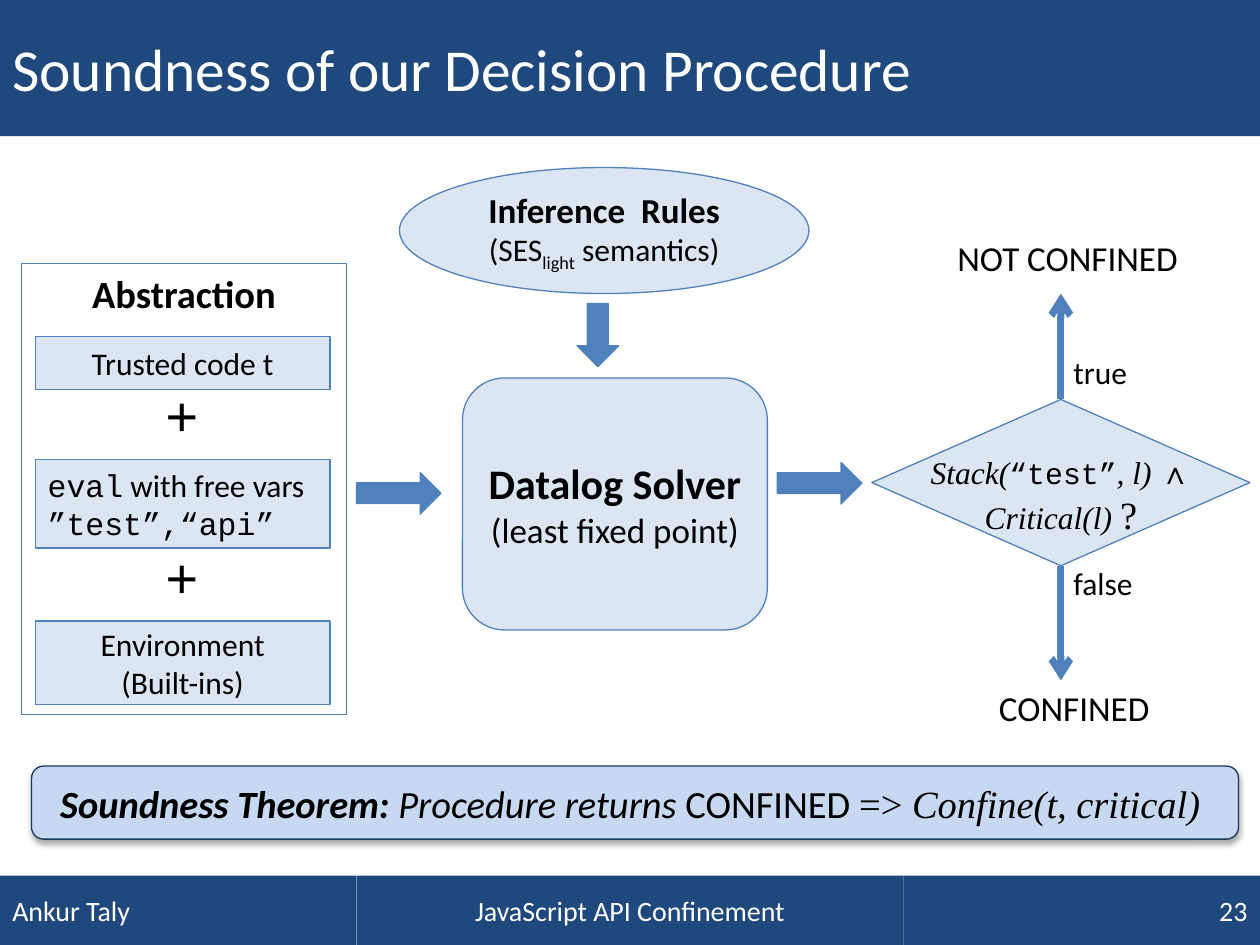
from pptx import Presentation
from pptx.dml.color import RGBColor
from pptx.enum.shapes import MSO_CONNECTOR, MSO_SHAPE as Shape
from pptx.enum.text import MSO_ANCHOR as Anchor, MSO_AUTO_SIZE as AutoSize, PP_ALIGN as Align
from pptx.oxml.ns import qn
from pptx.util import Emu, Pt
from lxml.etree import SubElement

NAVY, BLUE, PALE, SKY, DEEP = "1F497D", "4F81BD", "DCE6F2", "C6D9F1", "17375E"
BLACK, WHITE = "000000", "FFFFFF"
SANS, MONO, SERIF = "Calibri", "Courier New", "Times New Roman"
PX_PER_INCH = 100


def px(length):
    return Emu(length * 914400 // PX_PER_INCH)


def rgb(code):
    return RGBColor.from_string(code)


def run(text, size=18, font=SANS, bold=False, italic=False, baseline=0):
    return text, size, font, bold, italic, baseline


class Deck:
    def __init__(self, width, height):
        self.prs = Presentation()
        self.prs.slide_width, self.prs.slide_height = px(width), px(height)
        self.slide = self.prs.slides.add_slide(self.prs.slide_layouts[6])

    def fill_text(self, frame, paragraphs, align, color=BLACK):
        frame.word_wrap = True
        for index, runs in enumerate(paragraphs):
            paragraph = frame.add_paragraph() if index else frame.paragraphs[0]
            paragraph.alignment = align
            for text, size, font, bold, italic, baseline in runs:
                piece = paragraph.add_run()
                piece.text = text
                piece.font.size, piece.font.name = Pt(size), font
                piece.font.bold, piece.font.italic = bold, italic
                piece.font.color.rgb = rgb(color)
                if baseline:
                    piece.font._element.set("baseline", str(baseline * 1000))

    def box(self, kind, place, paragraphs=(), fill=PALE, line=BLUE, align=Align.CENTER, color=BLACK):
        shape = self.slide.shapes.add_shape(kind, *map(px, place))
        shape.shadow.inherit = False
        if fill:
            shape.fill.solid()
            shape.fill.fore_color.rgb = rgb(fill)
        else:
            shape.fill.background()
        if line:
            shape.line.color.rgb = rgb(line)
            shape.line.width = Pt(0.75)
        else:
            shape.line.fill.background()
        shape.text_frame.vertical_anchor = Anchor.MIDDLE
        self.fill_text(shape.text_frame, paragraphs, align, color)
        return shape

    def bar(self, place, text, size, align):
        self.box(Shape.RECTANGLE, place, [[run(text, size)]], NAVY, None, align, WHITE)

    def label(self, place, paragraphs, align=Align.LEFT):
        frame = self.slide.shapes.add_textbox(*map(px, place)).text_frame
        self.fill_text(frame, paragraphs, align)
        frame.auto_size = AutoSize.SHAPE_TO_FIT_TEXT

    def arrow(self, x, start, end):
        line = self.slide.shapes.add_connector(MSO_CONNECTOR.STRAIGHT, px(x), px(start), px(x), px(end))
        line.line.color.rgb = rgb(BLUE)
        line.line.width = Pt(4)
        SubElement(line.line._get_or_add_ln(), qn("a:tailEnd"), type="arrow")
        SubElement(line._element.spPr, qn("a:effectLst"))

    def cast_shadow(self, shape):
        effects = shape._element.spPr.find(qn("a:effectLst"))
        shadow = SubElement(effects, qn("a:outerShdw"), blurRad=str(Pt(3.1)), dist=str(Pt(1.8)),
                            dir="5400000", rotWithShape="0")
        tint = SubElement(shadow, qn("a:srgbClr"), val=BLACK)
        SubElement(tint, qn("a:alpha"), val="35000")


def main():
    deck = Deck(1000, 750)
    deck.bar((0, 0, 1000, 108), "Soundness of our Decision Procedure", 34, Align.LEFT)
    for left, width, text, align in (
        (0, 283, "Ankur Taly", Align.LEFT),
        (283, 434, "JavaScript API Confinement", Align.CENTER),
        (717, 283, "23", Align.RIGHT),
    ):
        deck.bar((left, 695, width, 55), text, 16, align)

    theorem = deck.box(Shape.ROUNDED_RECTANGLE, (25, 608, 958, 58), [[
        run("Soundness Theorem: ", 22, bold=True, italic=True),
        run("Procedure returns ", 22, italic=True),
        run("CONFINED ", 22),
        run("=> ", 22, SERIF),
        run("Confine(t, critical) ", 22, SERIF, italic=True),
    ]], SKY, DEEP)
    deck.cast_shadow(theorem)

    deck.box(Shape.RECTANGLE, (17, 209, 258, 358), fill=None)
    deck.label((17, 209, 258, 47), [[run("Abstraction", 22, bold=True)]], Align.CENTER)
    free_vars = [[run("eval", font=MONO), run(" with free vars "), run("”test”,“api”", font=MONO)]]
    for top, height, paragraphs, align in (
        (267, 42, [[run("Trusted code t")]], Align.CENTER),
        (365, 70, free_vars, Align.LEFT),
        (493, 66, [[run("Environment")], [run("(Built-ins)")]], Align.CENTER),
    ):
        deck.box(Shape.RECTANGLE, (28, top, 234, height), paragraphs, align=align)
    for top in (297, 426):
        deck.label((28, top, 234, 64), [[run("+", 32, MONO)]], Align.CENTER)

    deck.box(Shape.OVAL, (317, 133, 325, 100), [[
        run("Inference  Rules ", 20, bold=True),
        run("(SES"), run("light", baseline=-25), run(" semantics)"),
    ]])
    deck.box(Shape.FLOWCHART_ALTERNATE_PROCESS, (367, 300, 242, 200), [
        [run("Datalog Solver", 24, bold=True)],
        [run("(least fixed point) ", 20)],
    ])
    for kind, place in (
        (Shape.RIGHT_ARROW, (283, 375, 67, 33)),
        (Shape.DOWN_ARROW, (458, 241, 33, 50)),
        (Shape.RIGHT_ARROW, (617, 367, 67, 33)),
    ):
        deck.box(kind, place, fill=BLUE)

    deck.box(Shape.FLOWCHART_DECISION, (692, 317, 300, 132))
    deck.label((692, 355, 300, 77), [
        [run("Stack(", font=SERIF, italic=True), run("“test”", 17, MONO),
         run(", l)", font=SERIF, italic=True), run(" ∧", font=SERIF)],
        [run("Critical(l) ", font=SERIF, italic=True), run("?", 22, SERIF)],
    ], Align.CENTER)
    deck.arrow(842, 317, 233)
    deck.arrow(842, 449, 540)
    for place, text, size in (
        ((750, 183, 258, 44), "NOT CONFINED", 20),
        ((783, 540, 258, 44), "CONFINED", 20),
        ((842, 275, 83, 40), "true", 18),
        ((842, 443, 83, 40), "false", 18),
    ):
        deck.label(place, [[run(text, size)]])

    deck.prs.save("out.pptx")


if __name__ == "__main__":
    main()
